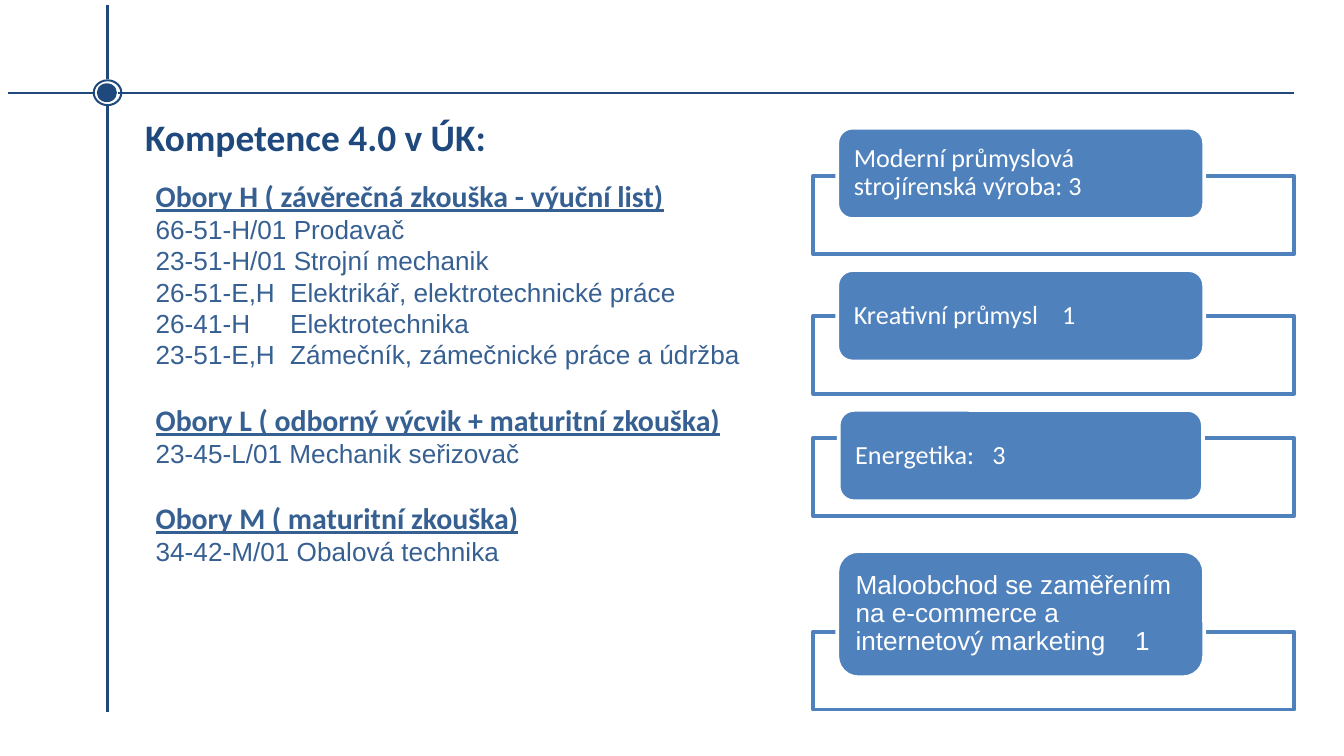
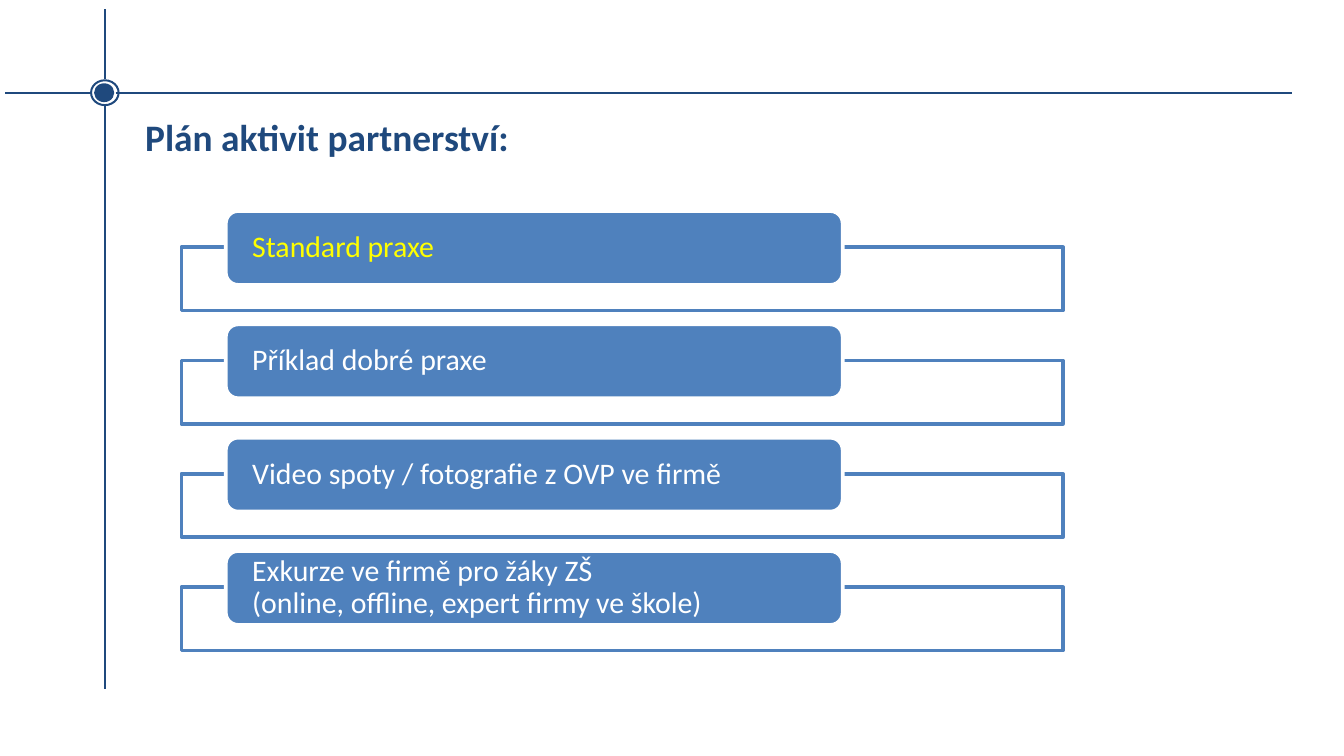
from dataclasses import dataclass
from typing import NamedTuple

from lxml import etree
from pptx import Presentation
from pptx import util as u
from pptx.dml.color import RGBColor
from pptx.enum import shapes, text
from pptx.oxml import ns


@dataclass(frozen=True)
class Theme:
    navy: str = "1F497D"
    ink: str = "376092"
    blue: str = "4F81BD"
    white: str = "FFFFFF"
    yellow: str = "FFFF00"
    heading_font: str = "Calibri"
    list_font: str = "Arial"
    title_size: float = 20
    heading_size: float = 16
    list_size: float = 14
    axis_width: float = 1.25
    card_line: float = 2
    tight: float = 0.9
    section_gap: float = 16.75


THEME = Theme()


class Box(NamedTuple):
    left: float
    top: float
    width: float
    height: float

    def lengths(self) -> list:
        return [u.Inches(value) for value in self]


class Style(NamedTuple):
    size: float
    color: str
    font: str = THEME.heading_font
    bold: bool = False
    underline: bool = False


class Card(NamedTuple):
    """A rounded label lying over an outlined frame."""
    lines: list[str]
    label: Box
    frame: Box
    style: Style
    inset: float
    tab: float | None = None


class Section(NamedTuple):
    heading: str
    programmes: list[str]


class Axes(NamedTuple):
    """The crossing lines at the top left, with the reach of the vertical one."""
    x: float
    top: float
    bottom: float
    y: float = 0.69


TITLE = Box(0.98, 0.84, 8.65, 0.4)
TITLE_STYLE = Style(THEME.title_size, THEME.navy, bold=True)
HEADING_STYLE = Style(THEME.heading_size, THEME.ink, bold=True, underline=True)
PROGRAMME_STYLE = Style(THEME.list_size, THEME.ink, THEME.list_font)
FIELD_STYLE = Style(THEME.list_size, THEME.white)
PLAN_STYLE = Style(THEME.heading_size, THEME.white)

SECTIONS = [
    Section("Obory H ( závěrečná zkouška - výuční list)", [
        "66-51-H/01 Prodavač",
        "23-51-H/01 Strojní mechanik",
        "26-51-E,H\tElektrikář, elektrotechnické práce",
        "26-41-H\tElektrotechnika",
        "23-51-E,H\tZámečník, zámečnické práce a údržba",
    ]),
    Section("Obory L ( odborný výcvik + maturitní zkouška)",
            ["23-45-L/01 Mechanik seřizovač"]),
    Section("Obory M ( maturitní zkouška)", ["34-42-M/01 Obalová technika"]),
]


def field_card(line: str, label: Box, frame_top: float, tab: float | None = None,
               font: str = THEME.heading_font) -> Card:
    return Card([line], label, Box(6.05, frame_top, 3.58, 0.58),
                FIELD_STYLE._replace(font=font), 0.09, tab)


FIELDS = [
    field_card("Moderní průmyslová strojírenská výroba: 3",
               Box(6.23, 0.95, 2.73, 0.68), 1.31),
    field_card("Kreativní průmysl\t1", Box(6.23, 2.01, 2.73, 0.68), 2.35, 1.55),
    field_card("Energetika:\t3", Box(6.24, 3.05, 2.71, 0.68), 3.26, 1.02),
    field_card("Maloobchod se zaměřením na e-commerce a internetový marketing\t1",
               Box(6.23, 4.1, 2.73, 0.94), 4.7, 2.08, THEME.list_font),
]

ACTIVITIES = [
    (["Standard praxe"], THEME.yellow),
    (["Příklad dobré praxe"], THEME.white),
    (["Video spoty / fotografie z OVP ve firmě"], THEME.white),
    (["Exkurze ve firmě pro žáky ZŠ",
      "(online, offline, expert firmy ve škole)"], THEME.white),
]
FIRST_ACTIVITY_TOP, LAST_ACTIVITY_TOP = 1.57, 4.1
ACTIVITY_PITCH = (LAST_ACTIVITY_TOP - FIRST_ACTIVITY_TOP) / (len(ACTIVITIES) - 1)


def rgb(color: str) -> RGBColor:
    return RGBColor.from_string(color)


def add_run(paragraph, words: str, style: Style) -> None:
    run = paragraph.add_run()
    run.text = words
    run.font.size = u.Pt(style.size)
    run.font.name = style.font
    run.font.bold = style.bold
    run.font.underline = style.underline
    run.font.color.rgb = rgb(style.color)


def add_line(frame, index: int, words: str, style: Style,
             spacing: float | None = None, before: float = 0,
             tab: float | None = None) -> None:
    """Write one paragraph; a tab in the words jumps to the given stop."""
    paragraph = frame.add_paragraph() if index else frame.paragraphs[0]
    paragraph.alignment = text.PP_ALIGN.LEFT
    paragraph.line_spacing = spacing
    paragraph.space_before = u.Pt(before)
    if tab is not None:
        properties = paragraph._p.get_or_add_pPr()
        stops = etree.SubElement(properties, ns.qn("a:tabLst"))
        etree.SubElement(stops, ns.qn("a:tab"), pos=str(u.Inches(tab)), algn="l")
    add_run(paragraph, words, style)


def add_filled(slide, kind, box: Box, fill: str, line: str | None = None):
    shape = slide.shapes.add_shape(kind, *box.lengths())
    shape.shadow.inherit = False
    shape.fill.solid()
    shape.fill.fore_color.rgb = rgb(fill)
    if line is None:
        shape.line.fill.background()
    else:
        shape.line.color.rgb = rgb(line)
        shape.line.width = u.Pt(THEME.card_line)
    return shape


def set_opacity(shape, percent: int) -> None:
    color = shape.element.spPr.find(ns.qn("a:solidFill"))[0]
    etree.SubElement(color, ns.qn("a:alpha"), val=str(percent * 1000))


def add_axes(slide, axes: Axes) -> None:
    x, y = axes.x, axes.y
    arms = [
        (x - 0.1, y, x - 0.74, y),
        (x, y - 0.1, x, axes.top),
        (x + 0.08, y, x + 8.83, y),
        (x, y + 0.1, x, axes.bottom),
    ]
    for arm in arms:
        line = slide.shapes.add_connector(
            shapes.MSO_CONNECTOR.STRAIGHT, *(u.Inches(end) for end in arm))
        line.line.color.rgb = rgb(THEME.navy)
        line.line.width = u.Pt(THEME.axis_width)
        etree.SubElement(line.element.spPr, ns.qn("a:effectLst"))
    ring = add_filled(slide, shapes.MSO_SHAPE.DONUT,
                      Box(x - 0.11, y - 0.1, 0.22, 0.2), THEME.navy)
    ring.adjustments[0] = 0.075
    add_filled(slide, shapes.MSO_SHAPE.OVAL,
               Box(x - 0.08, y - 0.07, 0.15, 0.14), THEME.navy)


def add_titled_slide(deck, title: str, axes: Axes):
    slide = deck.slides.add_slide(deck.slide_layouts.get_by_name("Title Only"))
    add_axes(slide, axes)
    heading = slide.shapes.title
    heading.left, heading.top, heading.width, heading.height = TITLE.lengths()
    frame = heading.text_frame
    frame.word_wrap = True
    frame.auto_size = text.MSO_AUTO_SIZE.NONE
    frame.vertical_anchor = text.MSO_ANCHOR.MIDDLE
    add_line(frame, 0, title, TITLE_STYLE, THEME.tight)
    return slide


def add_card(slide, card: Card) -> None:
    outline = add_filled(slide, shapes.MSO_SHAPE.RECTANGLE, card.frame,
                         THEME.white, THEME.blue)
    set_opacity(outline, 90)
    label = add_filled(slide, shapes.MSO_SHAPE.ROUNDED_RECTANGLE, card.label,
                       THEME.blue, THEME.white)
    frame = label.text_frame
    frame.word_wrap = True
    frame.vertical_anchor = text.MSO_ANCHOR.MIDDLE
    frame.margin_left = frame.margin_right = u.Inches(card.inset)
    frame.margin_top = frame.margin_bottom = 0
    for index, line in enumerate(card.lines):
        add_line(frame, index, line, card.style, THEME.tight, tab=card.tab)


def add_sections(slide, box: Box, sections: list[Section]) -> None:
    frame = slide.shapes.add_textbox(*box.lengths()).text_frame
    frame.word_wrap = True
    frame.margin_top = u.Inches(0.32)
    index = 0
    for section in sections:
        gap = THEME.section_gap if index else 0
        add_line(frame, index, section.heading, HEADING_STYLE, before=gap)
        for programme in section.programmes:
            index += 1
            add_line(frame, index, programme, PROGRAMME_STYLE, tab=1.0)
        index += 1


def build_competences(deck) -> None:
    slide = add_titled_slide(deck, "Kompetence 4.0 v ÚK:", Axes(0.8, 0.04, 5.3))
    add_sections(slide, Box(1.06, 1, 8.08, 4.25), SECTIONS)
    for card in FIELDS:
        add_card(slide, card)


def build_plan(deck) -> None:
    slide = add_titled_slide(deck, "Plán aktivit partnerství:",
                             Axes(0.78, 0.07, 5.13))
    for row, (lines, color) in enumerate(ACTIVITIES):
        top = FIRST_ACTIVITY_TOP + row * ACTIVITY_PITCH
        add_card(slide, Card(lines, Box(1.68, top, 4.59, 0.55),
                             Box(1.35, top + 0.27, 6.56, 0.47),
                             PLAN_STYLE._replace(color=color), 0.17))


def main() -> None:
    deck = Presentation()
    deck.slide_width = u.Inches(10)
    deck.slide_height = u.Inches(10 * 9 / 16)
    build_competences(deck)
    build_plan(deck)
    deck.save("out.pptx")


if __name__ == "__main__":
    main()
